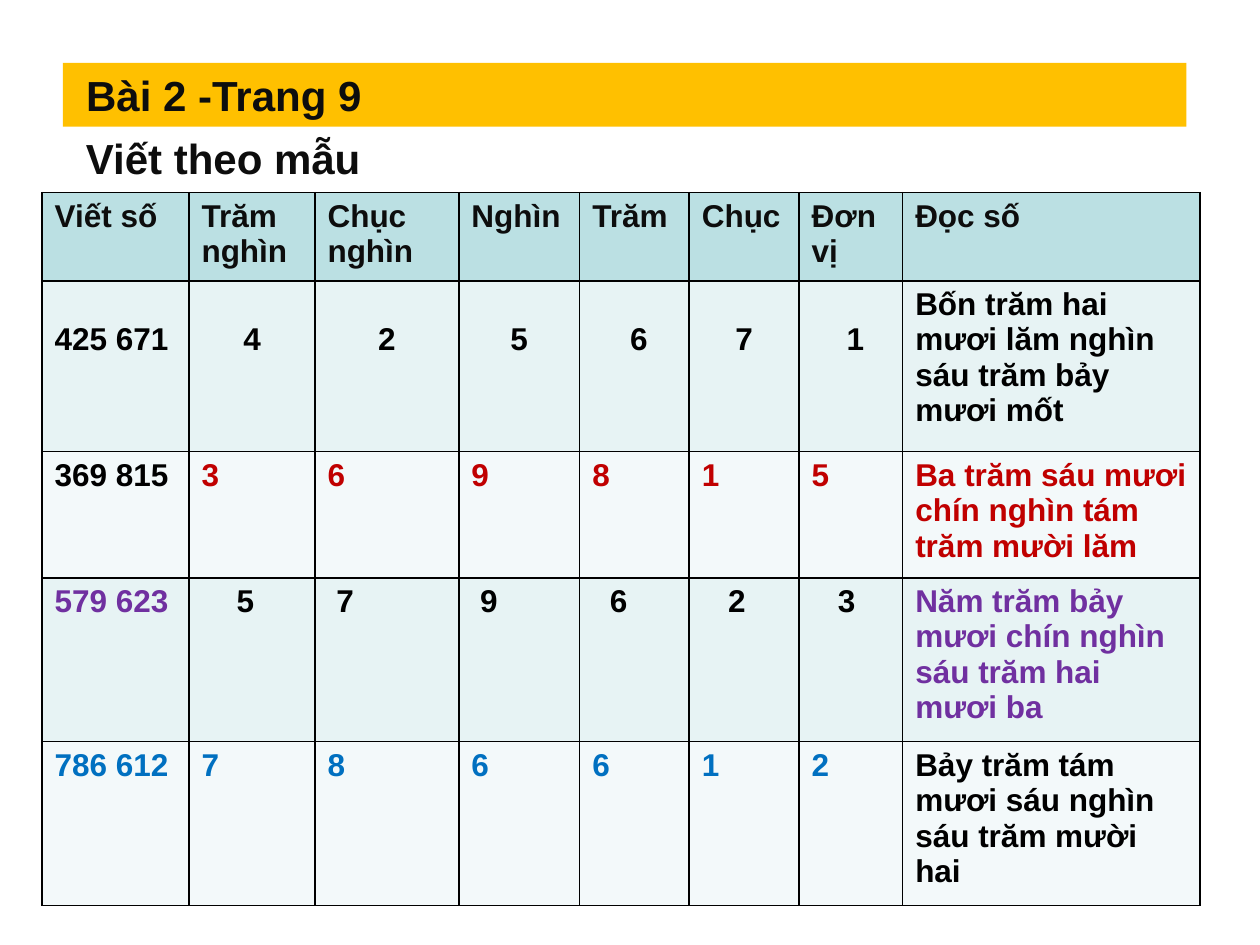
from lxml.etree import SubElement
from pptx import Presentation
from pptx.dml.color import RGBColor
from pptx.enum.shapes import MSO_SHAPE
from pptx.enum.text import MSO_ANCHOR, MSO_AUTO_SIZE, PP_ALIGN
from pptx.oxml.ns import qn
from pptx.util import Pt

INK = RGBColor(0x0D, 0x0D, 0x0D)
BLACK = RGBColor(0, 0, 0)
RED = RGBColor(0xC0, 0, 0)
PURPLE = RGBColor(0x70, 0x30, 0xA0)
BLUE = RGBColor(0, 0x70, 0xC0)
AMBER = RGBColor(0xFF, 0xC0, 0)
HEADER_FILL = RGBColor(0xBB, 0xE0, 0xE3)
ODD_FILL = RGBColor(0xE7, 0xF3, 0xF4)
EVEN_FILL = RGBColor(0xF3, 0xF9, 0xFA)

SIDE_INSET, TOP_INSET = 7.2, 3.6
LINE = 20.2  # height of one line of table text
COLUMN_WIDTHS = [84, 72, 82.2, 69.1, 62.6, 62.8, 59.2, 169.8]
HEADINGS = ["Viết số", "Trăm nghìn", "Chục nghìn", "Nghìn",
            "Trăm", "Chục", "Đơn vị", "Đọc số"]
NO_INDENT = [0] * 6

# number, reading, (number, digit, reading) colours, row height,
# digit indents, whether the digits are centred one line lower
NUMBERS = [
    ("425 671", "Bốn trăm hai mươi lăm nghìn sáu trăm bảy mươi mốt",
     (BLACK, BLACK, BLACK), 97.7, [0, 0, 0, 5, 0, 5], True),
    ("369 815", "Ba trăm sáu mươi chín nghìn tám trăm mười lăm",
     (BLACK, RED, RED), 72, NO_INDENT, False),
    ("579 623", "Năm trăm bảy mươi chín nghìn sáu trăm hai mươi ba",
     (PURPLE, BLACK, PURPLE), 93.6, [20, 5, 5, 10, 15, 15], False),
    ("786 612", "Bảy trăm tám mươi sáu nghìn sáu trăm mười hai",
     (BLUE, BLUE, BLACK), 93.6, NO_INDENT, False),
]


def apply(target, formats):
    for name, value in formats.items():
        setattr(target, name, value)


def write(frame, text, size, color, alignment):
    frame.text = text
    paragraph = frame.paragraphs[0]
    paragraph.alignment = alignment
    apply(paragraph.font, {"name": "Arial", "size": Pt(size), "bold": True})
    paragraph.font.color.rgb = color


def place_heading(shape, text, left, top):
    apply(shape, {"left": Pt(left), "top": Pt(top),
                  "width": Pt(306), "height": Pt(36.4)})
    frame = shape.text_frame
    write(frame, text, 24, INK, PP_ALIGN.JUSTIFY)
    apply(frame, {"word_wrap": True, "vertical_anchor": MSO_ANCHOR.TOP,
                  "auto_size": MSO_AUTO_SIZE.SHAPE_TO_FIT_TEXT,
                  "margin_left": Pt(SIDE_INSET), "margin_right": Pt(SIDE_INSET),
                  "margin_top": Pt(TOP_INSET), "margin_bottom": Pt(TOP_INSET)})


def add_headings(slide, left, top, width):
    title = slide.shapes.title
    bar = slide.shapes.add_shape(MSO_SHAPE.RECTANGLE, Pt(left), Pt(top),
                                 Pt(width), Pt(36.4))
    bar.shadow.inherit = False
    bar.fill.solid()
    bar.fill.fore_color.rgb = AMBER
    bar.line.fill.background()
    title._element.addprevious(bar._element)  # the bar lies behind the title
    place_heading(title, "Bài 2 -Trang 9", left + 6, top)
    task = slide.shapes.add_textbox(0, 0, 0, 0)
    place_heading(task, "Viết theo mẫu", left + 6, top + 36)


def add_borders(cell):
    properties = cell._tc.get_or_add_tcPr()
    for position, side in enumerate(("a:lnL", "a:lnR", "a:lnT", "a:lnB")):
        border = properties.makeelement(qn(side), {"w": str(Pt(1))})
        fill = SubElement(border, qn("a:solidFill"))
        SubElement(fill, qn("a:srgbClr"), val=str(BLACK))
        properties.insert(position, border)


def fill_cell(cell, text, color, fill, indent=0, drop=0,
              alignment=PP_ALIGN.LEFT):
    write(cell.text_frame, text, 18, color, alignment)
    apply(cell, {"margin_left": Pt(SIDE_INSET + indent),
                 "margin_right": Pt(SIDE_INSET),
                 "margin_top": Pt(TOP_INSET + drop),
                 "margin_bottom": Pt(TOP_INSET),
                 "vertical_anchor": MSO_ANCHOR.TOP})
    cell.fill.solid()
    cell.fill.fore_color.rgb = fill
    add_borders(cell)


def add_number_table(slide, left, top):
    heights = [50.2] + [number[3] for number in NUMBERS]
    table = slide.shapes.add_table(
        len(heights), len(HEADINGS), Pt(left), Pt(top),
        Pt(sum(COLUMN_WIDTHS)), Pt(sum(heights))).table
    for column, width in zip(table.columns, COLUMN_WIDTHS):
        column.width = Pt(width)
    for row, height in zip(table.rows, heights):
        row.height = Pt(height)

    for column, heading in enumerate(HEADINGS):
        fill_cell(table.cell(0, column), heading, INK, HEADER_FILL)
    for row, (number, reading, colors, _, indents, lowered) in enumerate(NUMBERS, 1):
        fill = ODD_FILL if row % 2 else EVEN_FILL
        number_color, digit_color, reading_color = colors
        drop = LINE if lowered else 0
        alignment = PP_ALIGN.CENTER if lowered else PP_ALIGN.LEFT
        fill_cell(table.cell(row, 0), number, number_color, fill, drop=drop)
        digits = number.replace(" ", "")
        for column, (digit, indent) in enumerate(zip(digits, indents), 1):
            fill_cell(table.cell(row, column), digit, digit_color, fill,
                      indent, drop, alignment)
        fill_cell(table.cell(row, 7), reading, reading_color, fill)


def main():
    presentation = Presentation()
    apply(presentation, {"slide_width": Pt(720), "slide_height": Pt(540)})
    slide = presentation.slides.add_slide(presentation.slide_layouts[5])
    add_headings(slide, 36, 36, 642)
    add_number_table(slide, 24, 110)
    presentation.save("out.pptx")


if __name__ == "__main__":
    main()
